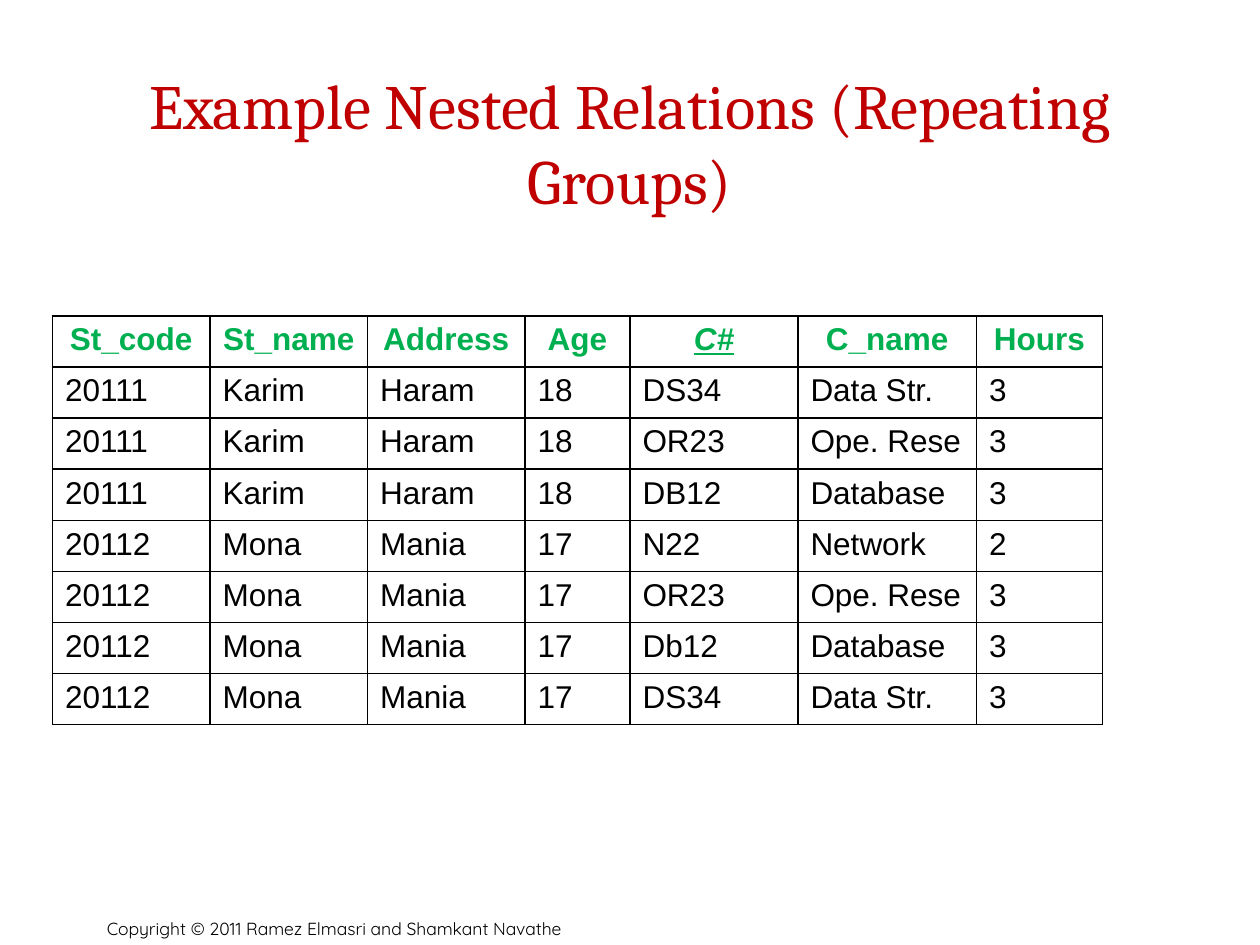
"""Build a slide with a table of nested student and course relations."""
from dataclasses import dataclass

from lxml import etree
from pptx import Presentation
from pptx.dml.color import RGBColor
from pptx.enum import text
from pptx.oxml import ns
from pptx.util import Pt


@dataclass(frozen=True)
class Theme:
    title_color: str = "C00000"
    header_color: str = "00B050"
    ink: str = "000000"
    title_size: int = 36
    table_size: int = 18
    footer_size: int = 10
    border: int = 1


theme = Theme()


def style_text(para, name, size, color):
    for span in para.runs:
        span.font.name = name
        span.font.size = Pt(size)
        span.font.color.rgb = RGBColor.from_string(color)


def draw_borders(cell):
    properties = cell._tc.get_or_add_tcPr()
    for position, side in enumerate(("lnL", "lnR", "lnT", "lnB")):
        line = etree.Element(ns.qn(f"a:{side}"), w=str(Pt(theme.border)))
        fill = etree.SubElement(line, ns.qn("a:solidFill"))
        etree.SubElement(fill, ns.qn("a:srgbClr"), val=theme.ink)
        properties.insert(position, line)


headers = ["St_code", "St_name", "Address", "Age", "C#", "C_name", "Hours"]
widths = [90, 90, 90, 60, 96, 102, 72]
row_height = 29.2
students = [
    (["20111", "Karim", "Haram", "18"],
     [["DS34", "Data Str.", "3"], ["OR23", "Ope. Rese", "3"], ["DB12", "Database", "3"]]),
    (["20112", "Mona", "Mania", "17"],
     [["N22", "Network", "2"], ["OR23", "Ope. Rese", "3"],
      ["Db12", "Database", "3"], ["DS34", "Data Str.", "3"]]),
]
rows = [headers] + [student + course for student, courses in students for course in courses]

deck = Presentation()
deck.slide_width, deck.slide_height = Pt(720), Pt(540)
page = deck.slides.add_slide(deck.slide_layouts[5])

footer = page.shapes.add_textbox(Pt(54), Pt(516), Pt(515.5), Pt(24))
frame = footer.text_frame
frame.word_wrap = True
frame.vertical_anchor = text.MSO_ANCHOR.BOTTOM
frame.text = "Copyright © 2011 Ramez Elmasri and Shamkant Navathe"
style_text(frame.paragraphs[0], "Quicksand", theme.footer_size, theme.ink)

title = page.shapes.title
title.left, title.top, title.width, title.height = Pt(36), Pt(36), Pt(648), Pt(90)
frame = title.text_frame
frame.text = "Example Nested Relations (Repeating Groups)"
frame.word_wrap = True
frame.auto_size = text.MSO_AUTO_SIZE.NONE
frame.vertical_anchor = text.MSO_ANCHOR.MIDDLE
frame.margin_left = frame.margin_right = frame.margin_top = frame.margin_bottom = 0
frame.paragraphs[0].alignment = text.PP_ALIGN.CENTER
style_text(frame.paragraphs[0], "Cambria", theme.title_size, theme.title_color)

table = page.shapes.add_table(
    len(rows), len(headers), Pt(30), Pt(180.5), Pt(sum(widths)), Pt(row_height * len(rows))
).table
table.horz_banding = False
for column, width in zip(table.columns, widths):
    column.width = Pt(width)
for row_index, values in enumerate(rows):
    table.rows[row_index].height = Pt(row_height)
    is_header = row_index == 0
    for column_index, value in enumerate(values):
        cell = table.cell(row_index, column_index)
        cell.text = value
        cell.fill.background()
        draw_borders(cell)
        para = cell.text_frame.paragraphs[0]
        para.alignment = text.PP_ALIGN.CENTER if is_header else text.PP_ALIGN.LEFT
        style_text(para, "Arial", theme.table_size, theme.header_color if is_header else theme.ink)
        para.runs[0].font.bold = is_header

key_font = table.cell(0, headers.index("C#")).text_frame.paragraphs[0].runs[0].font
key_font.italic = True
key_font.underline = True

deck.save("out.pptx")
